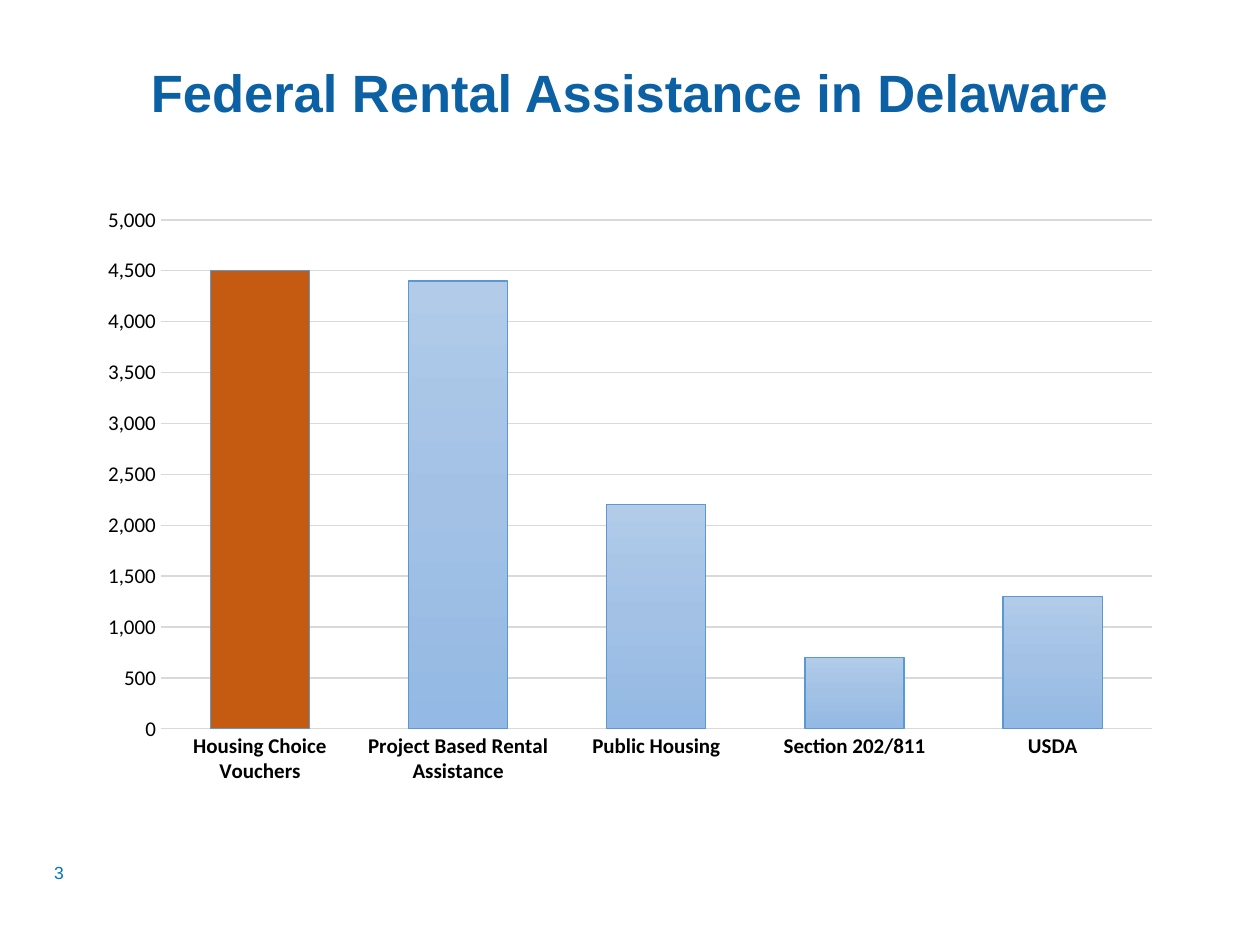
"""Build a slide with a column chart of federal rental assistance in Delaware."""

from copy import deepcopy
from dataclasses import dataclass

from lxml import etree
from pptx import Presentation
from pptx.chart.data import CategoryChartData
from pptx.dml.color import RGBColor
from pptx.enum.chart import XL_CHART_TYPE, XL_TICK_MARK
from pptx.enum.shapes import MSO_SHAPE
from pptx.enum.text import MSO_ANCHOR, PP_ALIGN
from pptx.oxml.ns import qn
from pptx.util import Emu, Pt

COLUMN_CLUSTERED = XL_CHART_TYPE.COLUMN_CLUSTERED
NO_TICK = XL_TICK_MARK.NONE
RECTANGLE = MSO_SHAPE.RECTANGLE
TOP = MSO_ANCHOR.TOP
LEFT, CENTER = PP_ALIGN.LEFT, PP_ALIGN.CENTER

WHITE = RGBColor(0xFF, 0xFF, 0xFF)
BLACK = RGBColor(0x00, 0x00, 0x00)
TITLE_BLUE = RGBColor(0x0C, 0x61, 0xA4)
NUMBER_BLUE = RGBColor(0x00, 0x76, 0xBF)
GRID_GRAY = RGBColor(0xD9, 0xD9, 0xD9)
OUTLINE_BLUE = RGBColor(0x59, 0x98, 0xD0)
HIGHLIGHT_ORANGE = RGBColor(0xC5, 0x5A, 0x11)
COLUMN_GRADIENT = (
    RGBColor(0xB1, 0xCB, 0xE9),
    RGBColor(0xA3, 0xC1, 0xE5),
    RGBColor(0x93, 0xB9, 0xE4),
)
EMU_PER_PX = 914400 / 126


@dataclass(frozen=True)
class Box:
    left: int
    top: int
    width: int
    height: int

    def emu(self) -> tuple[Emu, ...]:
        return tuple(px(n) for n in (self.left, self.top, self.width, self.height))


@dataclass(frozen=True)
class Program:
    name: str
    households: int


SLIDE = Box(0, 0, 1260, 945)
TITLE = Box(87, 50, 1086, 183)
CHART = Box(87, 197, 1086, 600)
PLOT = Box(161, 220, 991, 509)
NUMBER = Box(54, 862, 43, 38)
PROGRAMS = (
    Program("Housing Choice Vouchers", 4500),
    Program("Project Based Rental Assistance", 4400),
    Program("Public Housing", 2200),
    Program("Section 202/811", 700),
    Program("USDA", 1300),
)


def px(length: int) -> Emu:
    return Emu(round(length * EMU_PER_PX))


def style_font(font, *, size: int, color: RGBColor, name: str, bold: bool = False) -> None:
    font.size, font.name, font.bold = Pt(size), name, bold
    font.color.rgb = color


def write_text(shape, text: str, *, align=LEFT, inset_top: int = 0, **font_format) -> None:
    frame = shape.text_frame
    frame.word_wrap, frame.vertical_anchor = True, TOP
    frame.margin_left = frame.margin_right = frame.margin_bottom = 0
    frame.margin_top = px(inset_top)
    paragraph = frame.paragraphs[0]
    paragraph.alignment = align
    run = paragraph.add_run()
    run.text = text
    style_font(run.font, **font_format)


def style_line(line, color: RGBColor) -> None:
    line.color.rgb = color
    line.width = Pt(0.75)


def fill_gradient(fill, colors: tuple[RGBColor, ...], chart_format_element) -> None:
    fill.gradient()
    fill.gradient_angle = 270
    stop_list = chart_format_element.find(".//" + qn("a:gsLst"))
    stop_list.insert(1, deepcopy(stop_list[0]))
    for index, (stop, color) in enumerate(zip(fill.gradient_stops, colors)):
        stop.position = index / (len(colors) - 1)
        stop.color.rgb = color


def place_plot(chart, chart_box: Box, plot_box: Box) -> None:
    plot_area = chart.element.find(".//" + qn("c:plotArea"))
    layout = plot_area.find(qn("c:layout"))
    if layout is None:
        layout = etree.Element(qn("c:layout"))
        plot_area.insert(0, layout)
    manual = etree.SubElement(layout, qn("c:manualLayout"))
    settings = {
        "layoutTarget": "inner",
        "xMode": "edge",
        "yMode": "edge",
        "x": round((plot_box.left - chart_box.left) / chart_box.width, 4),
        "y": round((plot_box.top - chart_box.top) / chart_box.height, 4),
        "w": round(plot_box.width / chart_box.width, 4),
        "h": round(plot_box.height / chart_box.height, 4),
    }
    for tag, value in settings.items():
        etree.SubElement(manual, qn(f"c:{tag}")).set("val", str(value))


def add_program_chart(slide, programs: tuple[Program, ...]) -> None:
    data = CategoryChartData(number_format="#,##0")
    data.categories = [program.name for program in programs]
    data.add_series("Series 1", [program.households for program in programs])
    chart = slide.shapes.add_chart(COLUMN_CLUSTERED, *CHART.emu(), data).chart
    chart.has_legend = chart.has_title = False
    style_font(chart.font, size=10, color=BLACK, name="Calibri")
    place_plot(chart, CHART, PLOT)

    for axis, bold in ((chart.category_axis, True), (chart.value_axis, False)):
        axis.major_tick_mark = axis.minor_tick_mark = NO_TICK
        style_font(axis.tick_labels.font, size=12, color=BLACK, name="Calibri", bold=bold)
    style_line(chart.category_axis.format.line, GRID_GRAY)
    values = chart.value_axis
    values.minimum_scale, values.maximum_scale, values.major_unit = 0, 5000, 500
    values.tick_labels.number_format = "#,##0"
    values.tick_labels.number_format_is_linked = False
    values.format.line.fill.background()
    style_line(values.major_gridlines.format.line, GRID_GRAY)

    plot = chart.plots[0]
    plot.gap_width, plot.overlap, plot.vary_by_categories = 100, -24, False
    series = plot.series[0]
    series.invert_if_negative = False
    fill_gradient(series.format.fill, COLUMN_GRADIENT, chart.element)
    style_line(series.format.line, OUTLINE_BLUE)
    highlight = series.points[0].format
    highlight.fill.solid()
    highlight.fill.fore_color.rgb = HIGHLIGHT_ORANGE
    style_line(highlight.line, OUTLINE_BLUE)


def add_slide_number(slide, text: str) -> None:
    shape = slide.shapes.add_shape(RECTANGLE, *NUMBER.emu())
    shape.shadow.inherit = False
    shape.fill.solid()
    shape.fill.fore_color.rgb = WHITE
    shape.line.fill.background()
    write_text(shape, text, size=10, color=NUMBER_BLUE, name="Arial")


def main() -> None:
    presentation = Presentation()
    presentation.slide_width, presentation.slide_height = px(SLIDE.width), px(SLIDE.height)
    slide = presentation.slides.add_slide(presentation.slide_layouts[6])
    write_text(
        slide.shapes.add_textbox(*TITLE.emu()),
        "Federal Rental Assistance in Delaware",
        align=CENTER, inset_top=10, size=30, color=TITLE_BLUE, name="Arial", bold=True,
    )
    add_program_chart(slide, PROGRAMS)
    add_slide_number(slide, "3")
    presentation.save("out.pptx")


if __name__ == "__main__":
    main()
